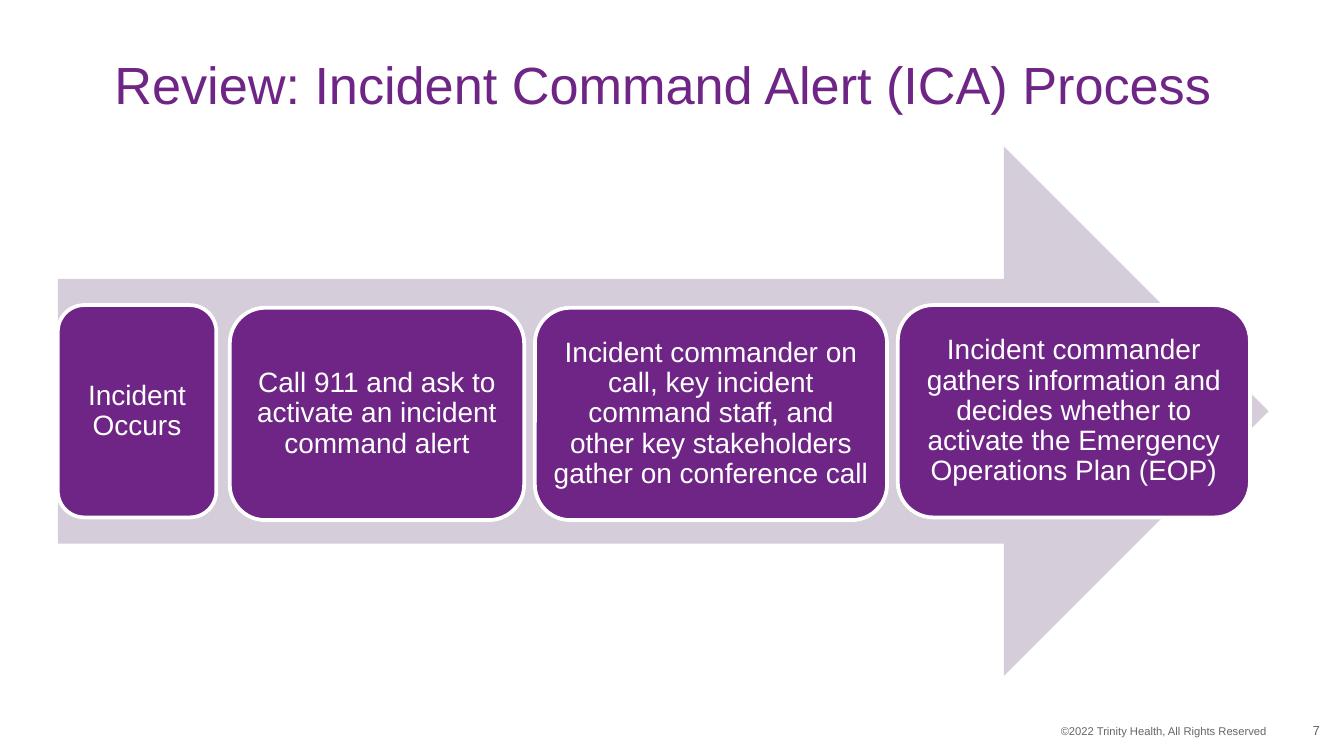
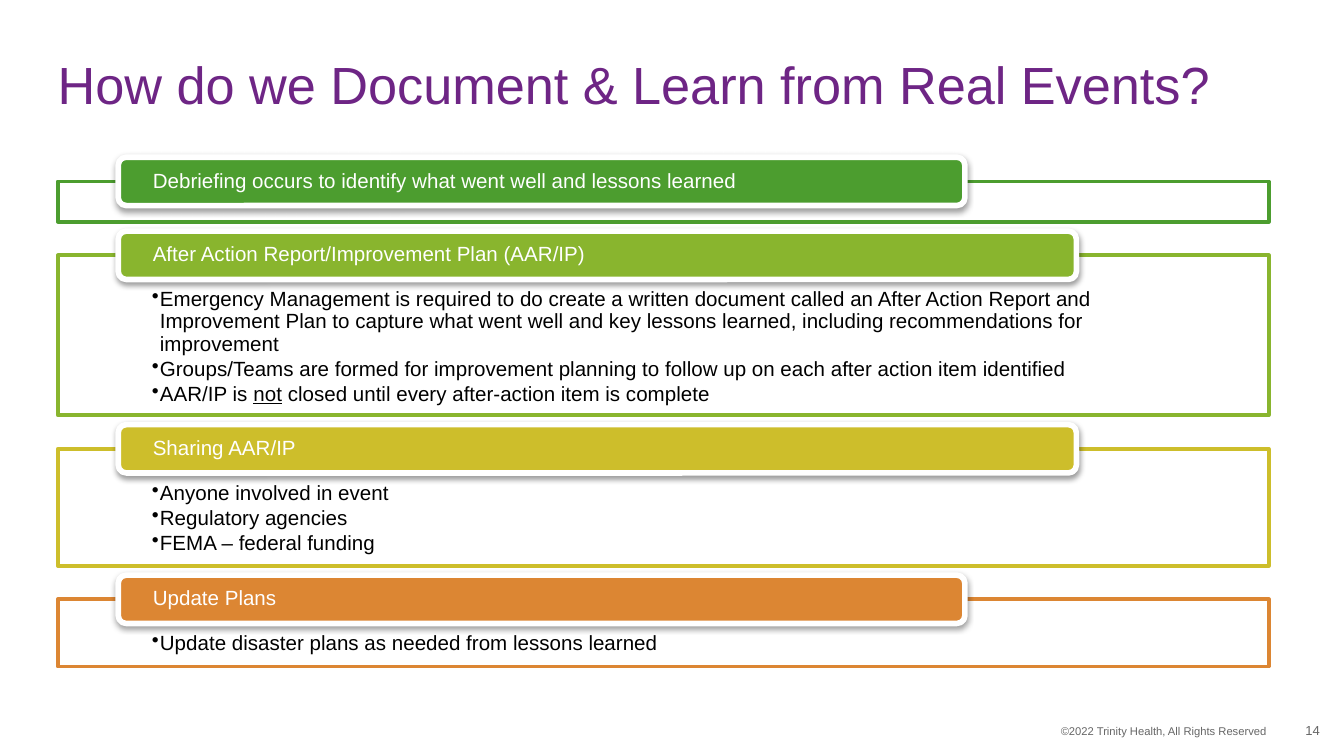
from dataclasses import dataclass

from lxml import etree
from pptx import Presentation
from pptx import util as u
from pptx.dml.color import RGBColor
from pptx.enum import shapes, text
from pptx.oxml.ns import qn

Inches, Pt = u.Inches, u.Pt
ALIGN = text.PP_ALIGN
ANCHOR = text.MSO_ANCHOR
SHAPE = shapes.MSO_SHAPE


@dataclass(frozen=True)
class Theme:
    font: str = "Arial"
    purple: str = "6E2585"
    lilac: str = "D5CDD9"
    white: str = "FFFFFF"
    black: str = "000000"
    grey: str = "666666"
    green: str = "4C9D2F"
    lime: str = "89B52E"
    yellow: str = "CDBE2B"
    orange: str = "DC8633"
    title_size: float = 28
    step_size: float = 15
    body_size: float = 11
    number_size: float = 7
    footer_size: float = 6
    line_spacing: float = 0.9


THEME = Theme()
CONTENT_LEFT, CONTENT_WIDTH = 0.43, 9.01
COPYRIGHT = "©2022 Trinity Health, All Rights Reserved"

# Left, top and width of each step, measured from the arrow's corner.
STEP_HEIGHT = 1.58
STEPS = [
    (0, 1.18, 1.18, "Incident Occurs"),
    (1.28, 1.2, 2.19, "Call 911 and ask to activate an incident command alert"),
    (3.55, 1.2, 2.62, "Incident commander on call, key incident command staff, "
     "and other key stakeholders gather on conference call"),
    (6.25, 1.18, 2.62, "Incident commander gathers information and decides "
     "whether to activate the Emergency Operations Plan (EOP)"),
]

# Colour, frame height, tab width, heading and bullets; _marks_ underline.
SECTIONS = [
    (THEME.green, 0.3, 6.3,
     "Debriefing occurs to identify what went well and lessons learned", []),
    (THEME.lime, 1.19, 7.13, "After Action Report/Improvement Plan (AAR/IP)", [
        "Emergency Management is required to do create a written document "
        "called an After Action Report and Improvement Plan to capture what "
        "went well and key lessons learned, including recommendations for "
        "improvement",
        "Groups/Teams are formed for improvement planning to follow up on "
        "each after action item identified",
        "AAR/IP is _not_ closed until every after-action item is complete"]),
    (THEME.yellow, 0.87, 7.13, "Sharing AAR/IP", [
        "Anyone involved in event",
        "Regulatory agencies",
        "FEMA – federal funding"]),
    (THEME.orange, 0.5, 6.3, "Update Plans", [
        "Update disaster plans as needed from lessons learned"]),
]


def rgb(colour):
    return RGBColor.from_string(colour)


def set_frame(shape, insets, anchor):
    """Wrap the shape's text, with insets as left, top, right, bottom."""
    frame = shape.text_frame
    frame.word_wrap = True
    frame.vertical_anchor = anchor
    (frame.margin_left, frame.margin_top,
     frame.margin_right, frame.margin_bottom) = map(Inches, insets)
    return frame


def style_para(para, size, colour, align=ALIGN.LEFT):
    para.alignment = align
    para.line_spacing = THEME.line_spacing
    for span in para.runs:
        span.font.name = THEME.font
        span.font.size = Pt(size)
        span.font.color.rgb = rgb(colour)


def write(shape, words, size, colour, align, insets, anchor=ANCHOR.MIDDLE):
    frame = set_frame(shape, insets, anchor)
    frame.text = words
    style_para(frame.paragraphs[0], size, colour, align)


def add_text(page, box, *style):
    write(page.shapes.add_textbox(*map(Inches, box)), *style)


def add_block(page, kind, box, fill, line=None, line_width=0):
    shape = page.shapes.add_shape(kind, *map(Inches, box))
    shape.shadow.inherit = False
    shape.fill.solid()
    shape.fill.fore_color.rgb = rgb(fill)
    if line:
        shape.line.color.rgb = rgb(line)
        shape.line.width = Pt(line_width)
    else:
        shape.line.fill.background()
    return shape


def set_alpha(colour_element, percent):
    etree.SubElement(colour_element, qn("a:alpha"), val=str(percent * 1000))


def add_drop_shadow(shape):
    effects = shape._element.spPr.find(qn("a:effectLst"))
    shadow = etree.SubElement(
        effects, qn("a:outerShdw"), blurRad=str(Pt(3.1)), dist=str(Pt(1.6)),
        dir="5400000", rotWithShape="0")
    set_alpha(etree.SubElement(shadow, qn("a:srgbClr"), val=THEME.black), 38)


def add_page(deck, title, title_align, number):
    """Add a blank slide with the shared title, copyright line and number."""
    page = deck.slides.add_slide(deck.slide_layouts[6])
    add_text(page, (CONTENT_LEFT, 0.38, 9, 0.55), title, THEME.title_size,
             THEME.purple, title_align, (0, 0, 0, 0))
    add_text(page, (5.33, 5.35, 4.19, 0.2), COPYRIGHT, THEME.footer_size,
             THEME.grey, ALIGN.RIGHT, (0.1, 0.05, 0.1, 0.05), ANCHOR.TOP)
    add_text(page, (9.38, 5.29, 0.44, 0.3), str(number), THEME.number_size,
             THEME.grey, ALIGN.RIGHT, (0.1, 0.05, 0, 0.05))
    return page


def add_process_arrow(page, box):
    left, top = box[:2]
    add_block(page, SHAPE.RIGHT_ARROW, box, THEME.lilac)
    for x, y, width, words in STEPS:
        step = add_block(page, SHAPE.ROUNDED_RECTANGLE,
                         (left + x, top + y, width, STEP_HEIGHT),
                         THEME.purple, THEME.white, 2)
        write(step, words, THEME.step_size, THEME.white, ALIGN.CENTER,
              (0.06,) * 4)


def add_bullets(shape, bullets):
    frame = set_frame(shape, (0.7, 0.25, 0.7, 0.09), ANCHOR.TOP)
    for index, words in enumerate(bullets):
        para = frame.add_paragraph() if index else frame.paragraphs[0]
        para.level = 1
        para.space_after = Pt(1.65)
        for position, part in enumerate(words.split("_")):
            span = para.add_run()
            span.text = part
            if position % 2:
                span.font.underline = True
        style_para(para, THEME.body_size, THEME.black)
        properties = para._p.get_or_add_pPr()
        properties.set("marL", str(Inches(0.06)))
        properties.set("indent", str(-Inches(0.06)))
        etree.SubElement(properties, qn("a:buChar"), char="•")
        para.font.size = Pt(THEME.body_size)


def add_section(page, box, colour, tab_width, heading, bullets):
    """Draw an outlined frame with a heading tab across its top edge."""
    left, top = box[:2]
    frame = add_block(page, SHAPE.RECTANGLE, box, THEME.white, colour, 2)
    set_alpha(frame._element.spPr.find(qn("a:solidFill"))[0], 90)
    if bullets:
        add_bullets(frame, bullets)
    tab = add_block(page, SHAPE.ROUNDED_RECTANGLE,
                    (left + 0.45, top - 0.18, tab_width, 0.36),
                    colour, THEME.white, 3)
    add_drop_shadow(tab)
    write(tab, heading, THEME.body_size, THEME.white, ALIGN.LEFT,
          (0.24, 0, 0.24, 0))


def add_section_list(page, left, top, width, gap=0.25):
    for colour, height, tab_width, heading, bullets in SECTIONS:
        add_section(page, (left, top, width, height), colour, tab_width,
                    heading, bullets)
        top += height + gap


def main():
    deck = Presentation()
    deck.slide_width = Inches(10)
    deck.slide_height = deck.slide_width * 9 // 16

    process = add_page(deck, "Review: Incident Command Alert (ICA) Process",
                       ALIGN.CENTER, 7)
    add_process_arrow(process, (CONTENT_LEFT, 1.09, CONTENT_WIDTH, 3.94))

    learning = add_page(deck, "How do we Document & Learn from Real Events?",
                        ALIGN.LEFT, 14)
    add_section_list(learning, CONTENT_LEFT, 1.35, CONTENT_WIDTH)

    deck.save("out.pptx")


if __name__ == "__main__":
    main()
